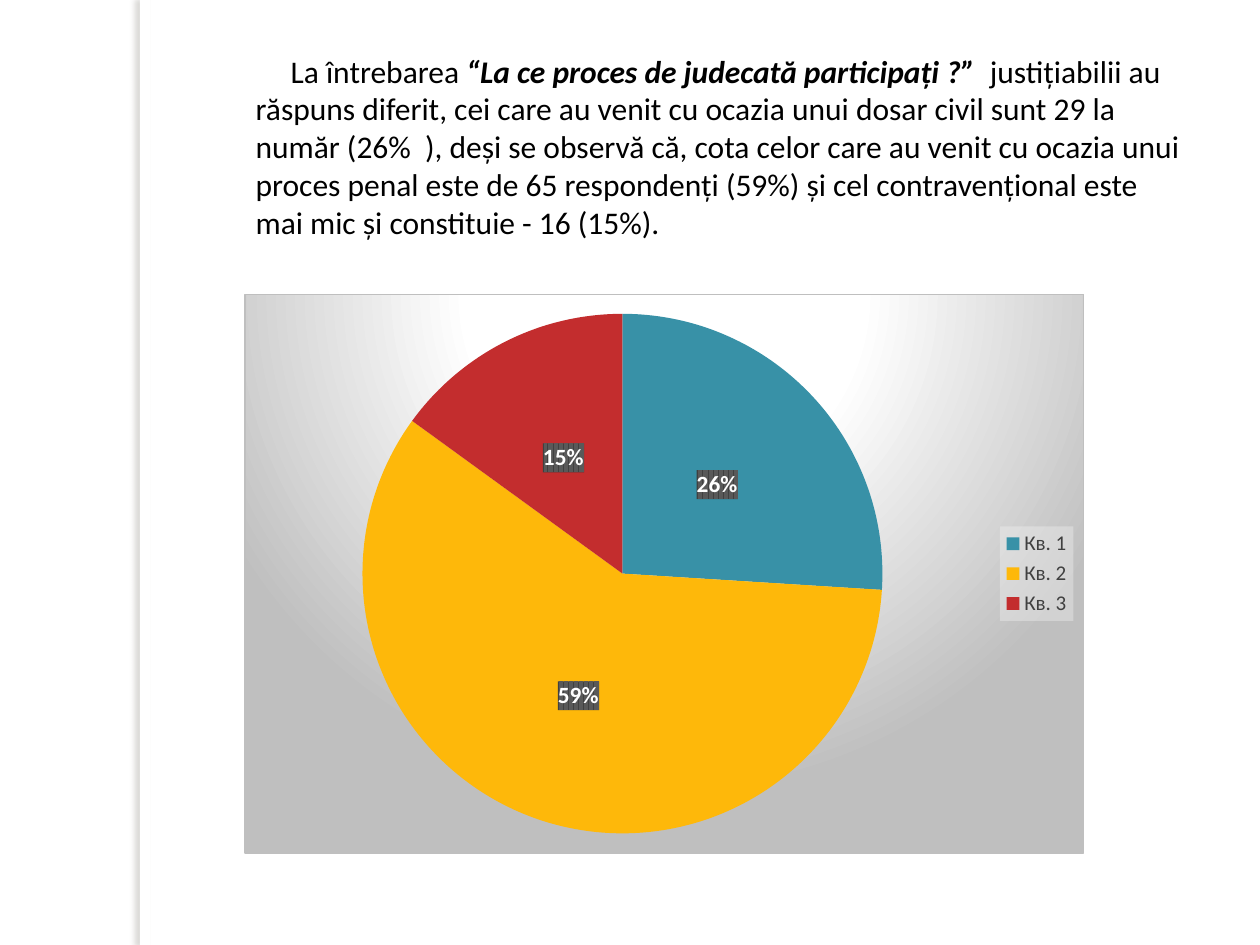
"""Build a slide with a paragraph on court cases and a pie chart of the answers."""
from dataclasses import dataclass

from pptx import Presentation
from pptx.chart.chart import Chart
from pptx.chart.data import CategoryChartData
from pptx.dml.color import RGBColor
from pptx.enum.chart import XL_CHART_TYPE, XL_LABEL_POSITION, XL_LEGEND_POSITION
from pptx.enum.lang import MSO_LANGUAGE_ID
from pptx.enum.shapes import MSO_SHAPE
from pptx.enum.text import MSO_AUTO_SIZE
from pptx.oxml import parse_xml
from pptx.oxml.ns import nsdecls, qn
from pptx.slide import Slide
from pptx.util import Pt

FONT = "Calibri"


@dataclass
class Passage:
    text: str
    emphasized: bool = False


@dataclass
class Slice:
    category: str
    value: int
    color: str


PASSAGES = [
    Passage("La întrebarea "),
    Passage("“La ce proces de judecată participați ?”  ", True),
    Passage(
        "justițiabilii au răspuns diferit, cei care au venit cu ocazia unui "
        "dosar civil sunt 29 la număr (26%  ), deşi se observă că, cota celor "
        "care au venit cu ocazia unui proces penal este de 65 respondenți (59%) "
        "şi cel contravențional este mai mic şi constituie - 16 (15%)."
    ),
]
SLICES = [
    Slice("Кв. 1", 26, "3891A7"),
    Slice("Кв. 2", 59, "FEB80A"),
    Slice("Кв. 3", 15, "C32D2E"),
]


def rgb(color: str) -> RGBColor:
    """Turn a hex string into a colour."""
    return RGBColor.from_string(color)


def style_font(font, size: float, color: str, bold: bool = False) -> None:
    """Set the face, size, colour and weight of a font."""
    font.name = FONT
    font.size = Pt(size)
    font.bold = bold
    font.color.rgb = rgb(color)


def chart_xml(tag: str, content: str):
    """Make a chart element with the given content."""
    return parse_xml(f"<c:{tag} {nsdecls('c', 'a')}>{content}</c:{tag}>")


def solid(color: str, alpha: int = 100) -> str:
    """Return the XML of a plain fill with the opacity in percent."""
    return (f'<a:solidFill><a:srgbClr val="{color}">'
            f'<a:alpha val="{alpha * 1000}"/></a:srgbClr></a:solidFill>')


def add_side_strip(slide: Slide) -> None:
    """Draw the white strip that casts a soft shadow to the left."""
    strip = slide.shapes.add_shape(MSO_SHAPE.RECTANGLE, Pt(80), Pt(0), Pt(5.76), Pt(540))
    strip.fill.solid()
    strip.fill.fore_color.rgb = rgb("FFFFFF")
    strip.line.fill.background()
    strip._element.spPr.append(parse_xml(
        f'<a:effectLst {nsdecls("a")}><a:outerShdw blurRad="{Pt(3)}" dist="{Pt(3)}" '
        'dir="10800000" algn="tl" rotWithShape="0"><a:srgbClr val="736F63">'
        '<a:alpha val="25000"/></a:srgbClr></a:outerShdw></a:effectLst>'))


def add_summary(slide: Slide, passages: list[Passage]) -> None:
    """Write the paragraph above the chart."""
    box = slide.shapes.add_textbox(Pt(139), Pt(26), Pt(544.3), Pt(116.6))
    frame = box.text_frame
    frame.word_wrap = True
    frame.auto_size = MSO_AUTO_SIZE.SHAPE_TO_FIT_TEXT
    para = frame.paragraphs[0]
    para._p.get_or_add_pPr().set("indent", str(Pt(20)))
    for passage in passages:
        span = para.add_run()
        span.text = passage.text
        style_font(span.font, 18, "000000", passage.emphasized)
        span.font.italic = passage.emphasized
        span.font.language_id = MSO_LANGUAGE_ID.ROMANIAN


def style_chart_area(chart: Chart) -> None:
    """Give the chart its round gradient, border and plot position."""
    stops = "".join(f'<a:gs pos="{position * 1000}"><a:srgbClr val="{color}"/></a:gs>'
                    for position, color in [(0, "FFFFFF"), (39, "FFFFFF"), (100, "BFBFBF")])
    chart_node = chart._chartSpace.find(qn("c:chart"))
    chart_node.addnext(chart_xml(
        "spPr",
        f'<a:gradFill><a:gsLst>{stops}</a:gsLst><a:path path="circle">'
        '<a:fillToRect l="50000" t="-80000" r="50000" b="180000"/></a:path></a:gradFill>'
        f'<a:ln w="{Pt(0.75)}">{solid("BFBFBF")}</a:ln>'))
    plot_area = chart_node.find(qn("c:plotArea"))
    for layout in plot_area.findall(qn("c:layout")):
        plot_area.remove(layout)
    sides = "".join(f'<c:{side} val="{share}"/>' for side, share in
                    [("x", 0.14), ("y", 0.03), ("w", 0.62), ("h", 0.94)])
    plot_area.insert(0, chart_xml(
        "layout",
        '<c:manualLayout><c:layoutTarget val="inner"/><c:xMode val="edge"/>'
        f'<c:yMode val="edge"/>{sides}</c:manualLayout>'))


def style_legend(chart: Chart) -> None:
    """Place the legend on the right over a pale tint."""
    chart.has_legend = True
    legend = chart.legend
    legend.position = XL_LEGEND_POSITION.RIGHT
    legend.include_in_layout = False
    style_font(legend.font, 12, "404040")
    legend._element.find(qn("c:txPr")).addprevious(chart_xml("spPr", solid("F2F2F2", 39)))


def style_labels(chart: Chart) -> None:
    """Show white percentages on dark striped boxes."""
    plot = chart.plots[0]
    plot.has_data_labels = True
    labels = plot.data_labels
    labels.show_percentage = True
    labels.show_value = False
    labels.number_format = "0%"
    labels.number_format_is_linked = False
    labels.position = XL_LABEL_POSITION.CENTER
    style_font(labels.font, 13.3, "FFFFFF", True)
    labels._element.find(qn("c:txPr")).addprevious(chart_xml(
        "spPr",
        '<a:pattFill prst="dkVert"><a:fgClr><a:srgbClr val="595959"/></a:fgClr>'
        '<a:bgClr><a:srgbClr val="404040"/></a:bgClr></a:pattFill>'))


def add_answer_chart(slide: Slide, slices: list[Slice]) -> None:
    """Draw the pie chart of the answers."""
    chart_data = CategoryChartData()
    chart_data.categories = [item.category for item in slices]
    chart_data.add_series("Series 1", [item.value for item in slices])
    chart = slide.shapes.add_chart(
        XL_CHART_TYPE.PIE, Pt(139.7), Pt(167.8), Pt(480), Pt(320), chart_data).chart
    chart.has_title = False
    style_font(chart.font, 10, "000000")
    for index, item in enumerate(slices):
        fill = chart.plots[0].series[0].points[index].format.fill
        fill.solid()
        fill.fore_color.rgb = rgb(item.color)
    style_chart_area(chart)
    style_legend(chart)
    style_labels(chart)


def main() -> None:
    """Build and save the deck."""
    deck = Presentation()
    deck.slide_width, deck.slide_height = Pt(720), Pt(540)
    page = deck.slides.add_slide(deck.slide_layouts[6])
    add_side_strip(page)
    add_summary(page, PASSAGES)
    add_answer_chart(page, SLICES)
    deck.save("out.pptx")


if __name__ == "__main__":
    main()
